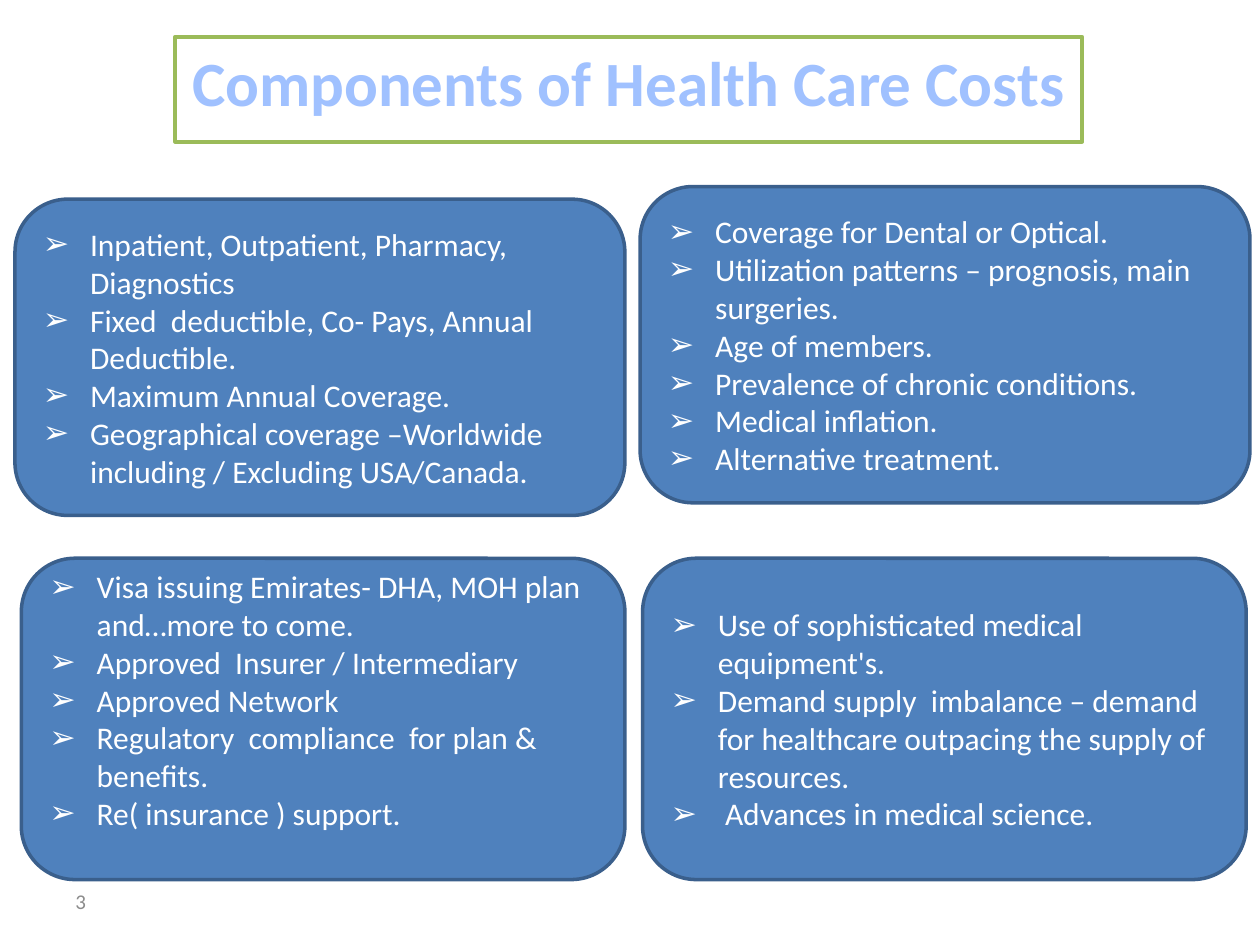
"""Build the slide on components of health care costs."""
from dataclasses import dataclass

from pptx import Presentation
from pptx.dml.color import RGBColor as Rgb
from pptx.enum import shapes, text
from pptx.oxml import parse_xml
from pptx.oxml.ns import nsdecls, qn
from pptx.util import Pt


@dataclass(frozen=True)
class Theme:
    font: str = "Calibri"
    head: str = "A0C1FF"
    rim: str = "9BBB59"
    paper: str = "FFFFFF"
    card: str = "4F81BD"
    edge: str = "3A5F8C"
    page: str = "8C8C8C"
    big: float = 36
    body: float = 18
    small: float = 12
    line: float = 2
    hang: float = 27


@dataclass(frozen=True)
class Card:
    left: float
    top: float
    width: float
    height: float
    items: tuple[str, ...]
    base: float = 3.6


LOOK = Theme()
WIDE, TALL = (348.5, 180.7), (344.9, 183.6)
CARDS = (
    Card(8.6, 113.8, *WIDE, (
        "Inpatient, Outpatient, Pharmacy, Diagnostics",
        "Fixed  deductible, Co- Pays, Annual Deductible.",
        "Maximum Annual Coverage.",
        "Geographical coverage –Worldwide including / Excluding USA/Canada.",
    )),
    Card(12.2, 319, *TALL, (
        "Visa issuing Emirates- DHA, MOH plan and…more to come.",
        "Approved  Insurer / Intermediary",
        "Approved Network",
        "Regulatory  compliance  for plan & benefits.",
        "Re( insurance ) support.",
    ), base=25.6),
    Card(367.2, 319, *TALL, (
        "Use of sophisticated medical equipment's.",
        "Demand supply  imbalance – demand  for healthcare outpacing "
        "the supply of resources.",
        " Advances in medical science.",
    )),
    Card(365.8, 106.6, *WIDE, (
        "Coverage for Dental or Optical.",
        "Utilization patterns – prognosis, main surgeries.",
        "Age of members.",
        "Prevalence of chronic conditions.",
        "Medical inflation.",
        "Alternative treatment.",
    )),
)


def apply(target, values: dict) -> None:
    """Set each named attribute on the target."""
    for name, value in values.items():
        setattr(target, name, value)


def place(shape, left: float, top: float, width: float, height: float) -> None:
    """Put a shape at a position given in points."""
    apply(shape, {"left": Pt(left), "top": Pt(top),
                  "width": Pt(width), "height": Pt(height)})


def paint(shape, fill: str, line: str) -> None:
    """Give a shape a solid fill and outline."""
    shape.fill.solid()
    shape.fill.fore_color.rgb = Rgb.from_string(fill)
    shape.line.color.rgb = Rgb.from_string(line)
    shape.line.width = Pt(LOOK.line)


def write(para, words: str, size: float, color: str, bold: bool = False) -> None:
    """Add one styled run to a paragraph."""
    run = para.add_run()
    run.text = words
    apply(run.font, {"name": LOOK.font, "size": Pt(size), "bold": bold})
    run.font.color.rgb = Rgb.from_string(color)


def bullet(para) -> None:
    """Give a paragraph an arrow bullet and a hanging indent."""
    props = para._p.get_or_add_pPr()
    props.set("marL", str(Pt(LOOK.hang)))
    props.set("indent", str(-Pt(LOOK.hang)))
    for tag, key, value in (("buFont", "typeface", "Arial"),
                            ("buChar", "char", "➢")):
        node = parse_xml(f"<a:{tag} {nsdecls('a')}/>")
        node.set(key, value)
        props.append(node)


def draw_card(slide, card: Card) -> None:
    """Draw a rounded card with its bulleted items."""
    shape = slide.shapes.add_shape(
        shapes.MSO_SHAPE.ROUNDED_RECTANGLE,
        Pt(card.left), Pt(card.top), Pt(card.width), Pt(card.height))
    shape.shadow.inherit = False
    paint(shape, LOOK.card, LOOK.edge)
    frame = shape.text_frame
    apply(frame, {"word_wrap": True, "margin_bottom": Pt(card.base),
                  "vertical_anchor": text.MSO_ANCHOR.MIDDLE})
    for rank, item in enumerate(card.items):
        para = frame.add_paragraph() if rank else frame.paragraphs[0]
        para.alignment = text.PP_ALIGN.LEFT
        bullet(para)
        write(para, item, LOOK.body, LOOK.paper)


def draw_head(slide, words: str) -> None:
    """Format the title placeholder as a framed heading."""
    title = slide.shapes.title
    place(title, 100, 21, 518.4, 51)
    paint(title, LOOK.paper, LOOK.rim)
    frame = title.text_frame
    apply(frame, {"word_wrap": False, "vertical_anchor": text.MSO_ANCHOR.TOP,
                  "auto_size": text.MSO_AUTO_SIZE.SHAPE_TO_FIT_TEXT})
    para = frame.paragraphs[0]
    para.alignment = text.PP_ALIGN.CENTER
    write(para, words, LOOK.big, LOOK.head, bold=True)


def draw_page(slide, words: str) -> None:
    """Write the page number at the lower left."""
    box = slide.shapes.add_textbox(Pt(36), Pt(500.5), Pt(168), Pt(28.8))
    apply(box.text_frame, {"word_wrap": True,
                           "vertical_anchor": text.MSO_ANCHOR.MIDDLE})
    write(box.text_frame.paragraphs[0], words, LOOK.small, LOOK.page)


def main() -> None:
    """Build and save the slide."""
    deck = Presentation()
    apply(deck, {"slide_width": Pt(720), "slide_height": Pt(540)})
    slide = deck.slides.add_slide(deck.slide_layouts[5])
    draw_page(slide, "3")
    for card in CARDS:
        draw_card(slide, card)
    draw_head(slide, "Components of Health Care Costs")
    deck.save("out.pptx")


if __name__ == "__main__":
    main()
